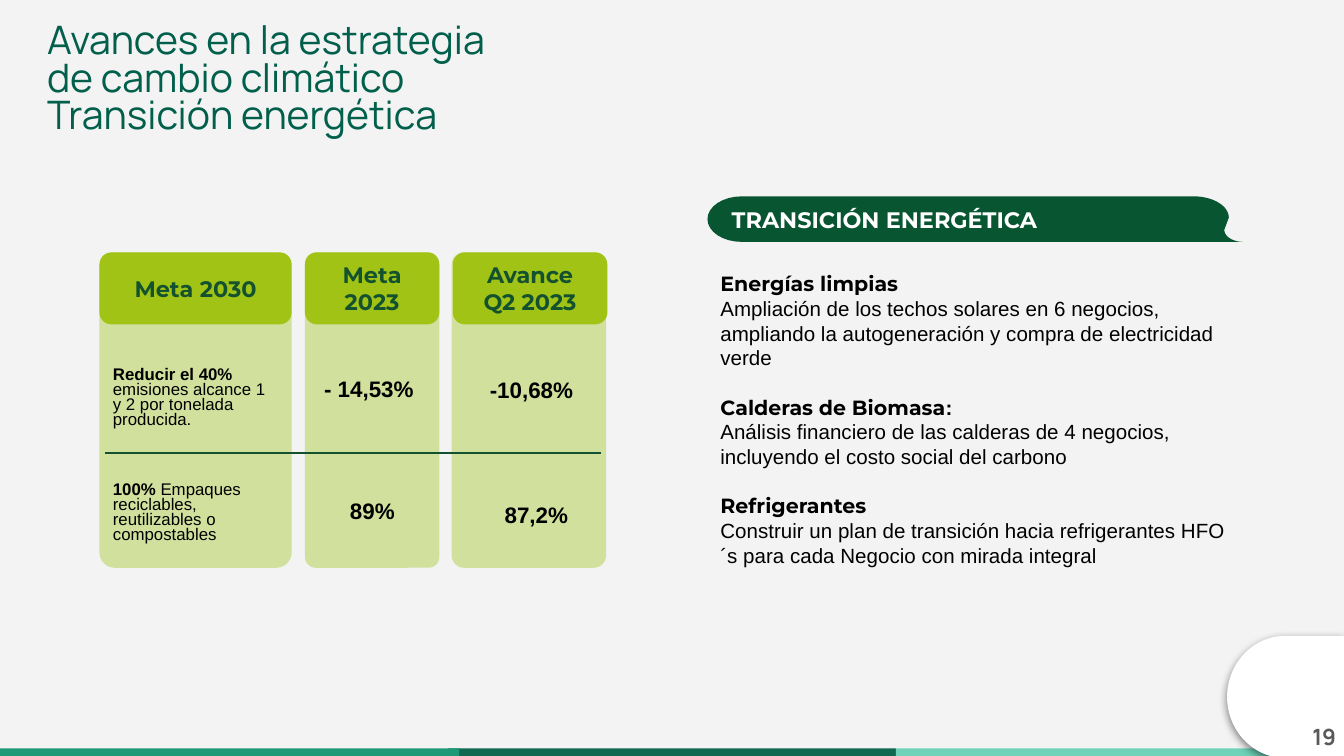
from dataclasses import dataclass
from math import cos, radians, sin

from lxml.etree import SubElement
from pptx import Presentation
from pptx.dml.color import RGBColor as RGB
from pptx.enum.shapes import MSO_CONNECTOR as Link, MSO_SHAPE as Kind
from pptx.enum.text import MSO_ANCHOR as Anchor, MSO_AUTO_SIZE as Fit, PP_ALIGN as Align
from pptx.oxml.ns import qn
from pptx.util import Pt

PLAIN_TABLE = "{2D5ABB26-0587-4C30-8999-92F81FD0307C}"


@dataclass(frozen=True)
class Theme:
    """Colours and text styles of the slide."""
    paper = "F3F3F3"
    white = "FFFFFF"
    lime = "A0C316"
    forest = "13512F"
    ribbon = "085631"
    footer = ("1C9A78", "116850", "6ED3B8")
    title = dict(name="Manrope", size=Pt(21), bold=False, color="015F4B")
    page = dict(name="Manrope", size=Pt(12), bold=True, color="595959")
    header = dict(name="Montserrat", size=Pt(12), bold=True, color=forest)
    banner = dict(header, color=white)
    topic = dict(name="Montserrat", size=Pt(11), bold=True, color="000000")
    detail = dict(name="Arial", size=Pt(11), bold=False, color="000000")
    colon = dict(detail, bold=True)
    goal = dict(detail, size=Pt(9))
    goal_bold = dict(goal, bold=True)
    figure = dict(goal_bold, size=Pt(12))


def assign(target, values):
    """Set every attribute in values on target."""
    for key, value in values.items():
        setattr(target, key, value)


def box(*lengths):
    """Turn lengths into points."""
    return [Pt(length) for length in lengths]


def arc(cx, cy, rx, ry, start, end, steps=16):
    """Return points along an elliptical arc, with angles in degrees."""
    angles = [radians(start + (end - start) * i / steps) for i in range(steps + 1)]
    return [(cx + rx * cos(a), cy + ry * sin(a)) for a in angles]


class Deck:
    """Holds the theme and the current slide and draws its elements."""

    def __init__(self, theme):
        """Open a slide with title and body placeholders."""
        self.theme = theme
        self.deck = Presentation()
        assign(self.deck, dict(slide_width=Pt(720), slide_height=Pt(405)))
        self.slide = self.deck.slides.add_slide(self.deck.slide_layouts[1])
        self.shapes = self.slide.shapes
        self.paint(self.slide.background, theme.paper)

    def paint(self, item, color):
        """Give an item a solid fill."""
        item.fill.solid()
        item.fill.fore_color.rgb = RGB.from_string(color)

    def set_text(self, frame, paragraphs, anchor=Anchor.TOP, left=7.2, **layout):
        """Fill a text frame with paragraphs of (text, style) runs."""
        assign(frame, dict(word_wrap=True, auto_size=Fit.NONE, vertical_anchor=anchor,
                           margin_left=Pt(left), margin_top=Pt(7.2),
                           margin_right=Pt(7.2), margin_bottom=Pt(7.2)))
        for index, (runs, gap) in enumerate(paragraphs):
            paragraph = frame.add_paragraph() if index else frame.paragraphs[0]
            properties = paragraph._p.get_or_add_pPr()
            properties.set("marL", "0")
            properties.set("indent", "0")
            SubElement(properties, qn("a:buNone"))
            assign(paragraph, dict(dict(alignment=Align.LEFT, space_before=Pt(gap)), **layout))
            for text, style in runs:
                run = paragraph.add_run()
                run.text = text
                assign(run.font, {k: v for k, v in style.items() if k != "color"})
                run.font.color.rgb = RGB.from_string(style["color"])

    def placeholder(self, index, place, paragraphs, **layout):
        """Move a placeholder and fill it."""
        holder = self.slide.placeholders[index]
        assign(holder, dict(zip(("left", "top", "width", "height"), box(*place))))
        self.set_text(holder.text_frame, paragraphs, **layout)

    def label(self, place, text, style, **layout):
        """Add a one-paragraph text box."""
        self.set_text(self.shapes.add_textbox(*box(*place)).text_frame,
                      [([(text, style)], 0)], **layout)

    def shape(self, kind, place, color, radius=None, alpha=None):
        """Add a filled preset shape without outline."""
        shape = self.shapes.add_shape(kind, *box(*place))
        shape.shadow.inherit = False
        self.paint(shape, color)
        shape.line.fill.background()
        if radius is not None:
            shape.adjustments[0] = radius
        if alpha is not None:
            tint = shape._element.spPr.find(qn("a:solidFill"))[0]
            SubElement(tint, qn("a:alpha"), val=str(alpha * 1000))
        return shape

    def corner(self, place):
        """Add the rounded page corner with its soft shadow."""
        properties = self.shape(Kind.FLOWCHART_DELAY, place, self.theme.white)._element.spPr
        properties.find(qn("a:xfrm")).set("flipH", "1")
        shadow = SubElement(properties.find(qn("a:effectLst")), qn("a:outerShdw"),
                            blurRad=str(Pt(4.5)), dist=str(Pt(1.5)), dir="5400000")
        tint = SubElement(shadow, qn("a:srgbClr"), val="000000")
        SubElement(tint, qn("a:alpha"), val="50000")

    def header(self, place, text):
        """Add a column header."""
        shape = self.shape(Kind.ROUNDED_RECTANGLE, place, self.theme.lime, 0.167)
        self.set_text(shape.text_frame, [([(text, self.theme.header)], 0)],
                      anchor=Anchor.MIDDLE, alignment=Align.CENTER)

    def ribbon(self, outline, text):
        """Add the curved banner."""
        start, *rest = [(100 * x, 100 * y) for x, y in outline]
        builder = self.shapes.build_freeform(*start, scale=Pt(1) / 100)
        builder.add_line_segments(rest, close=True)
        banner = builder.convert_to_shape()
        banner.shadow.inherit = False
        self.paint(banner, self.theme.ribbon)
        banner.line.fill.background()
        self.set_text(banner.text_frame, [([(text, self.theme.banner)], 0)],
                      anchor=Anchor.MIDDLE, left=13)

    def goals(self, place, widths, cells, spacings, top):
        """Add a one-row table of a goal and its figures."""
        table = self.shapes.add_table(1, len(cells), *box(*place)).table
        assign(table, dict(first_row=False, horz_banding=False))
        table._tbl.tblPr.find(qn("a:tableStyleId")).text = PLAIN_TABLE
        for index, (width, runs, spacing) in enumerate(zip(widths, cells, spacings)):
            table.columns[index].width = Pt(width)
            cell = table.cell(0, index)
            cell.fill.background()
            self.set_text(cell.text_frame, [(runs, 0)], line_spacing=spacing,
                          alignment=Align.CENTER if index else Align.LEFT)
            assign(cell, dict(vertical_anchor=Anchor.MIDDLE, margin_left=Pt(7.2),
                              margin_right=Pt(7.2), margin_bottom=Pt(7.2),
                              margin_top=Pt(7.2 if index else top)))

    def rule(self, left, right, y):
        """Add a thin horizontal line."""
        line = self.shapes.add_connector(Link.STRAIGHT, *box(left, y, right, y))
        line.line.color.rgb = RGB.from_string(self.theme.forest)
        line.line.width = Pt(0.75)
        SubElement(line._element.spPr, qn("a:effectLst"))


def main():
    """Build and save the slide."""
    theme = Theme()
    deck = Deck(theme)

    for part, color in enumerate(theme.footer):
        deck.shape(Kind.RECTANGLE, (240 * part, 401, 240, 5), color)
    deck.shape(Kind.RECTANGLE, (240, 401, 6, 5), theme.footer[0])
    deck.corner((657.4, 340.6, 62.6, 65.5))

    title = ("Avances en la estrategia", "de cambio climático", "Transición energética")
    deck.placeholder(0, (18, 5.8, 454.3, 75.6),
                     [([(line, theme.title)], 0) for line in title], line_spacing=0.8)

    columns = ((53.3, 53.3, 103, "Meta 2030"), (163.4, 163.4, 72, "Meta 2023"),
               (241.9, 242.6, 82.8, "Avance Q2 2023"))
    for panel, head, width, text in columns:
        deck.shape(Kind.ROUNDED_RECTANGLE, (panel, 135.2, width, 169), theme.lime, 0.08, 39)
        deck.header((head, 135.2, width, 38.6), text)

    emissions = [("Reducir el 40%", theme.goal_bold),
                 (" emisiones alcance 1 y 2 por tonelada producida.", theme.goal)]
    packaging = [("100%", theme.goal_bold),
                 (" Empaques reciclables, reutilizables o compostables", theme.goal)]
    rows = ((180.7, (97.9, 92.9, 81.4), emissions, "- 14,53%", "-10,68%", 1.0, 15.5),
            (246.2, (99.4, 93.6, 82.1), packaging, "89%", "87,2%", 1.15, 7.2))
    for top, widths, goal, target, progress, spacing, margin in rows:
        cells = (goal, [(target, theme.figure)], [(progress, theme.figure)])
        deck.goals((53.3, top, sum(widths), 57.6), widths, cells, (0.8, 0.8, spacing), margin)
    deck.rule(56.2, 321.8, 242.6)

    left_end = arc(397.4, 117.4, 18.4, 12.2, 270, 90)
    tail = arc(666, 123.1, 10.1, 6.5, 90, 180)
    right_end = arc(639.4, 116.6, 18.9, 11.4, 0, -90)
    deck.ribbon(left_end + tail + right_end, "TRANSICIÓN ENERGÉTICA")

    topics = (
        ("Energías limpias", "", "Ampliación de los techos solares en 6 negocios, "
         "ampliando la autogeneración y compra de electricidad verde"),
        ("Calderas de Biomasa", ":", "Análisis financiero de las calderas de 4 negocios, "
         "incluyendo el costo social del carbono"),
        ("Refrigerantes", "", "Construir un plan de transición hacia refrigerantes "
         "HFO´s para cada Negocio con mirada integral"))
    body = []
    for index, (name, mark, detail) in enumerate(topics):
        heading = [(name, theme.topic)] + ([(mark, theme.colon)] if mark else [])
        body += [(heading, 13.2 if index else 0), ([(detail, theme.detail)], 0)]
    deck.placeholder(1, (378.7, 138.2, 290.9, 200.9), body, line_spacing=1.0)

    deck.label((679.7, 380.2, 43.2, 31), "19", theme.page, alignment=Align.RIGHT)
    deck.deck.save("out.pptx")


if __name__ == "__main__":
    main()
